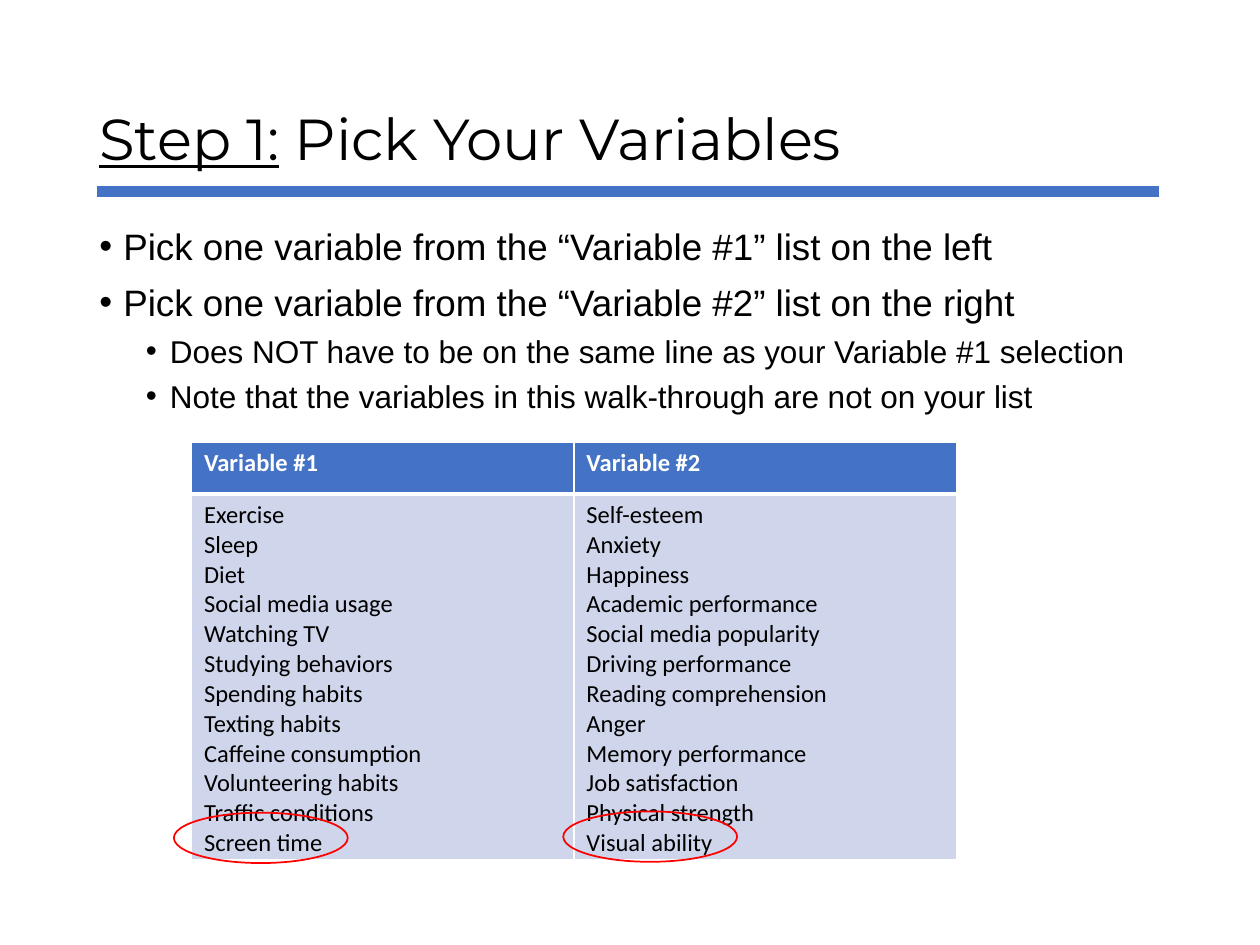
from typing import NamedTuple

from lxml import etree
from pptx import Presentation, util as u
from pptx.dml.color import RGBColor
from pptx.enum import shapes, text
from pptx.oxml import ns

BLUE, PALE, RED = "4472C4", "CFD5EA", "FF0000"
BLACK, WHITE = "000000", "FFFFFF"


class Bullet(NamedTuple):
    words: str
    size: float
    indent: float
    before: float
    after: float = 0


class Box(NamedTuple):
    left: float
    top: float
    width: float
    height: float

    def lengths(self) -> list:
        return [u.Inches(value) for value in self]


BULLETS = [
    Bullet("Pick one variable from the “Variable #1” list on the left", 21, 0.19, 2.5, 6),
    Bullet("Pick one variable from the “Variable #2” list on the right", 21, 0.19, 0.75, 3),
    Bullet("Does NOT have to be on the same line as your Variable #1 selection", 18, 0.56, 1.5),
    Bullet("Note that the variables in this walk-through are not on your list", 18, 0.56, 4),
]
VARIABLES = {
    "Variable #1": [
        "Exercise", "Sleep", "Diet", "Social media usage", "Watching TV",
        "Studying behaviors", "Spending habits", "Texting habits",
        "Caffeine consumption", "Volunteering habits", "Traffic conditions",
        "Screen time",
    ],
    "Variable #2": [
        "Self-esteem", "Anxiety", "Happiness", "Academic performance",
        "Social media popularity", "Driving performance",
        "Reading comprehension", "Anger", "Memory performance",
        "Job satisfaction", "Physical strength", "Visual ability",
    ],
}
CIRCLES = [Box(1.38, 6.45, 1.38, 0.4), Box(4.47, 6.44, 1.38, 0.4)]


def color(value: str) -> RGBColor:
    return RGBColor.from_string(value)


def add_run(paragraph, words: str, font: str, size: float, fill: str = BLACK,
            bold: bool = False, underline: bool = False) -> None:
    run = paragraph.add_run()
    run.text = words
    run.font.name = font
    run.font.size = u.Pt(size)
    run.font.bold = bold
    run.font.underline = underline
    run.font.color.rgb = color(fill)


def add_frame(slide, box: Box):
    frame = slide.shapes.add_textbox(*box.lengths()).text_frame
    frame.word_wrap = True
    return frame


def next_paragraph(frame, index: int):
    return frame.add_paragraph() if index else frame.paragraphs[0]


def add_title(slide) -> None:
    frame = add_frame(slide, Box(0.69, 0.4, 8.62, 1.45))
    frame.vertical_anchor = text.MSO_ANCHOR.MIDDLE
    paragraph = frame.paragraphs[0]
    paragraph.line_spacing = 0.9
    add_run(paragraph, "Step 1:", "Montserrat", 33, underline=True)
    add_run(paragraph, " Pick Your Variables", "Montserrat", 33)


def add_bullets(slide) -> None:
    frame = add_frame(slide, Box(0.69, 1.73, 8.62, 1.63))
    for index, bullet in enumerate(BULLETS):
        paragraph = next_paragraph(frame, index)
        paragraph.space_before = u.Pt(bullet.before)
        paragraph.space_after = u.Pt(bullet.after)
        add_run(paragraph, bullet.words, "Arial", bullet.size)
        properties = paragraph._p.get_or_add_pPr()
        properties.set("marL", str(u.Inches(bullet.indent)))
        properties.set("indent", str(u.Inches(-0.19)))
        etree.SubElement(properties, ns.qn("a:buFont")).set("typeface", "Arial")
        etree.SubElement(properties, ns.qn("a:buChar")).set("char", "•")


def add_rule(slide) -> None:
    line = slide.shapes.add_connector(
        shapes.MSO_CONNECTOR.STRAIGHT,
        u.Inches(0.77), u.Inches(1.52), u.Inches(9.2), u.Inches(1.52))
    line.line.color.rgb = color(BLUE)
    line.line.width = u.Pt(6)
    etree.SubElement(line._element.spPr, ns.qn("a:effectLst"))


def set_borders(cell, top: float, bottom: float) -> None:
    """Draw white borders, 1 pt wide at the sides."""
    properties = cell._tc.get_or_add_tcPr()
    widths = {"lnL": 1, "lnR": 1, "lnT": top, "lnB": bottom}
    for index, (name, width) in enumerate(widths.items()):
        border = etree.Element(ns.qn(f"a:{name}"), w=str(u.Pt(width)))
        fill = etree.SubElement(border, ns.qn("a:solidFill"))
        etree.SubElement(fill, ns.qn("a:srgbClr")).set("val", WHITE)
        properties.insert(index, border)


def fill_cell(cell, lines: list[str], header: bool) -> None:
    cell.fill.solid()
    cell.fill.fore_color.rgb = color(BLUE if header else PALE)
    for index, words in enumerate(lines):
        add_run(next_paragraph(cell.text_frame, index), words, "Calibri", 14,
                WHITE if header else BLACK, bold=header)
    set_borders(cell, 1 if header else 3, 3 if header else 1)


def add_variables(slide) -> None:
    box = Box(1.52, 3.51, 6.07, 3.31)
    table = slide.shapes.add_table(2, len(VARIABLES), *box.lengths()).table
    table.rows[0].height = u.Inches(0.41)
    table.rows[1].height = u.Inches(2.9)
    for column, (heading, names) in enumerate(VARIABLES.items()):
        fill_cell(table.cell(0, column), [heading], header=True)
        fill_cell(table.cell(1, column), names, header=False)


def add_circle(slide, box: Box) -> None:
    circle = slide.shapes.add_shape(shapes.MSO_SHAPE.OVAL, *box.lengths())
    circle.shadow.inherit = False
    circle.fill.background()
    circle.line.color.rgb = color(RED)
    circle.line.width = u.Pt(1)


def main() -> None:
    presentation = Presentation()
    presentation.slide_width = u.Inches(10)
    presentation.slide_height = u.Inches(7.5)
    slide = presentation.slides.add_slide(presentation.slide_layouts[6])
    add_title(slide)
    add_bullets(slide)
    add_rule(slide)
    add_variables(slide)
    for box in CIRCLES:
        add_circle(slide, box)
    presentation.save("out.pptx")


if __name__ == "__main__":
    main()
